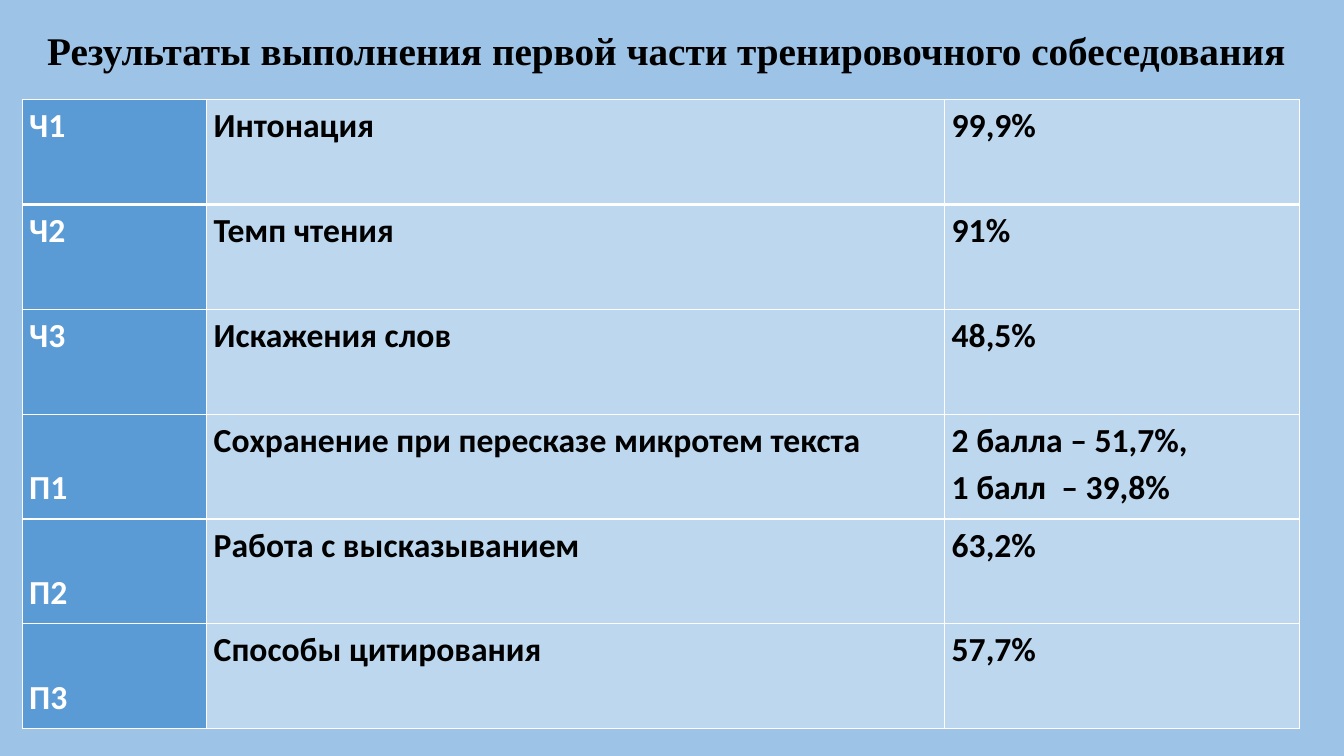
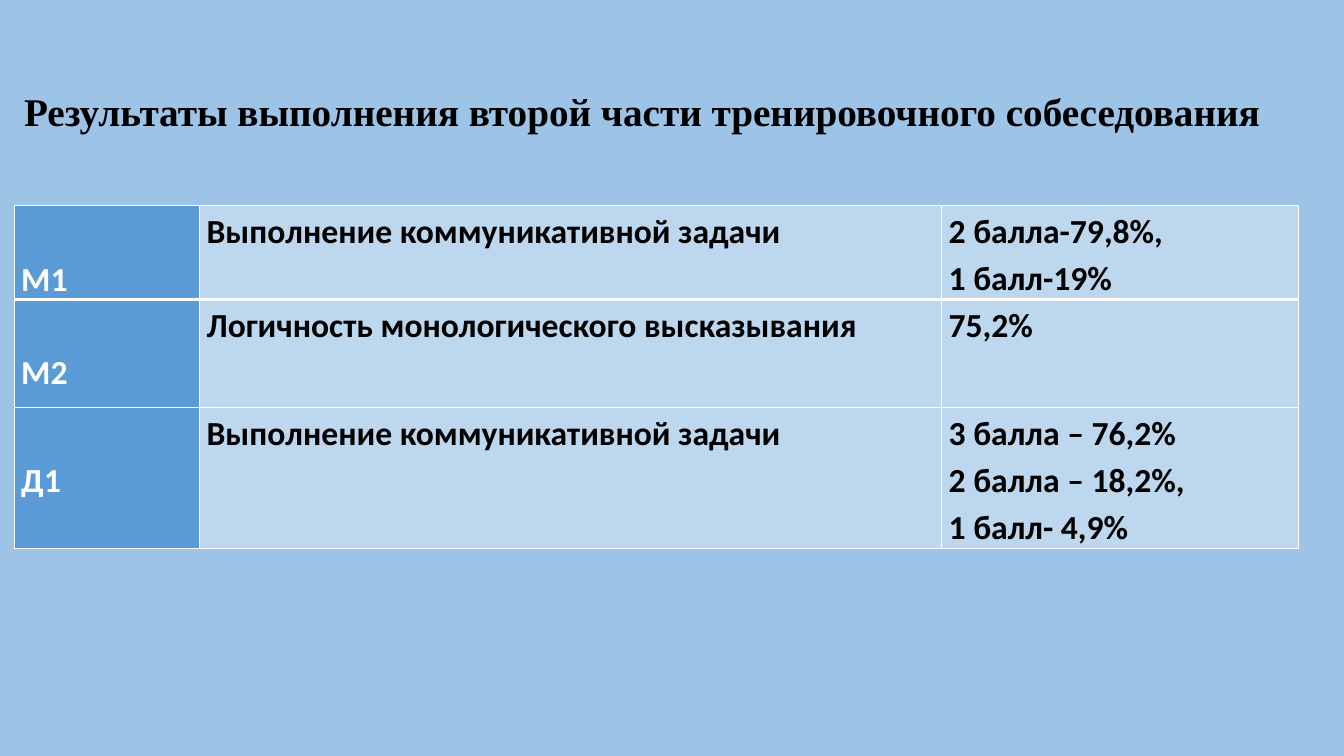
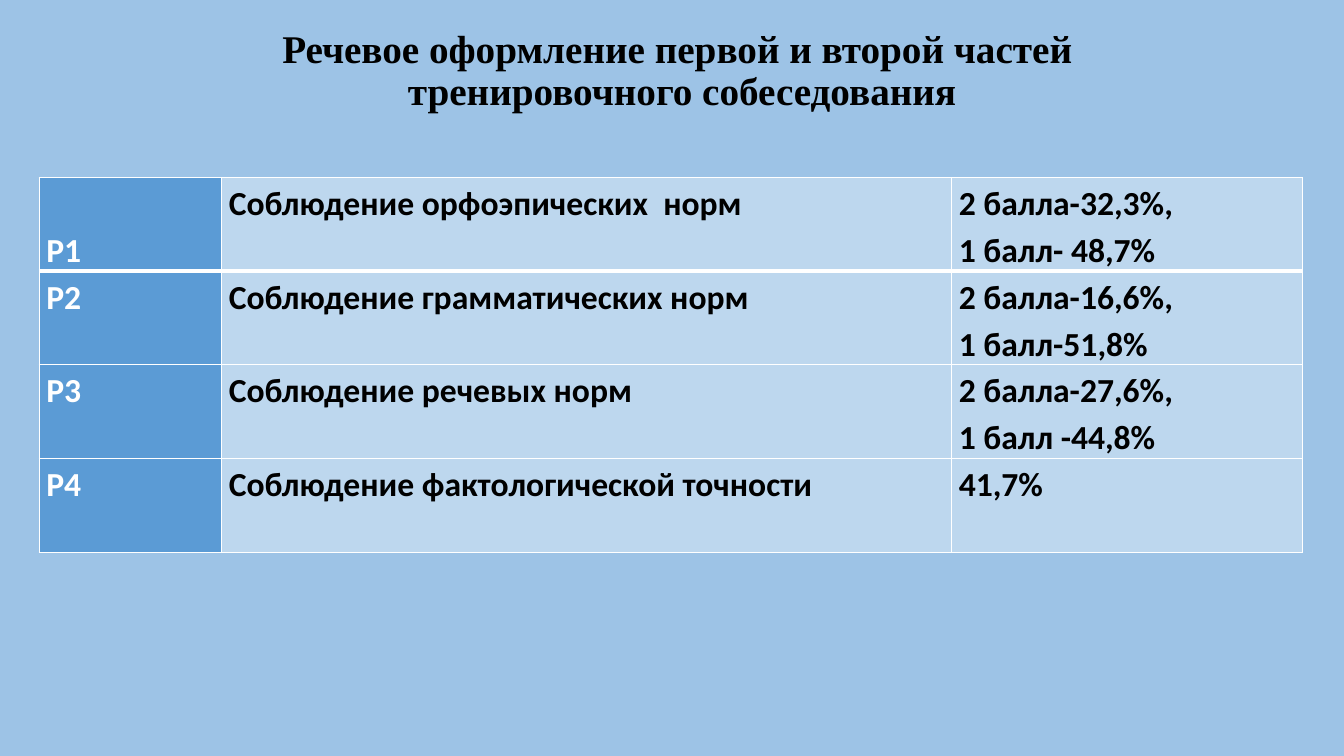
from dataclasses import dataclass

from lxml.etree import SubElement
from pptx import Presentation
from pptx.dml.color import RGBColor as Color
from pptx.enum.text import MSO_ANCHOR as Anchor, PP_ALIGN as Align
from pptx.oxml.ns import qn
from pptx.util import Pt

PX = 9144  # EMU in one px, 100 px to the inch


@dataclass(frozen=True)
class Theme:
    background: str = "9DC3E6"
    label_fill: str = "5B9BD5"
    cell_fill: str = "BDD7EE"
    dark: str = "000000"
    light: str = "FFFFFF"
    title_font: str = "Times New Roman"
    table_font: str = "Calibri"
    title_size: int = 28
    table_size: int = 24
    thin_line: int = 1
    thick_line: int = 3
    cell_inset: int = 7
    cell_line: int = 47  # height of one line of table text


theme = Theme()


def write(frame, text, *, font, size, color, spacing, align=Align.LEFT):
    """Fill a text frame; each line of the text becomes a bold paragraph."""
    frame.text = text
    frame.word_wrap = True
    for paragraph in frame.paragraphs:
        paragraph.alignment = align
        paragraph.line_spacing = spacing
        for run in paragraph.runs:
            run.font.name = font
            run.font.size = Pt(size)
            run.font.bold = True
            run.font.color.rgb = Color.from_string(color)


def add_border(cell, side, width):
    line = SubElement(cell._tc.get_or_add_tcPr(), qn(f"a:ln{side}"), w=str(Pt(width)))
    fill = SubElement(line, qn("a:solidFill"))
    SubElement(fill, qn("a:srgbClr"), val=theme.light)


# Each row: label, line the label stands on, criterion, results, height
slides = [
    {
        "title": "Результаты выполнения первой части тренировочного собеседования",
        "title_box": (37, 26, 1269, 682),
        "anchor": Anchor.TOP,
        "align": Align.LEFT,
        "table_at": (22, 99),
        "columns": (183, 732, 352),
        "rows": [
            ("Ч1", 0, "Интонация", "99,9%", 104),
            ("Ч2", 0, "Темп чтения", "91%", 104),
            ("Ч3", 0, "Искажения слов", "48,5%", 104),
            ("П1", 1, "Сохранение при пересказе микротем текста",
             "2 балла – 51,7%,\n1 балл  – 39,8%", 104),
            ("П2", 1, "Работа с высказыванием", "63,2%", 104),
            ("П3", 1, "Способы цитирования", "57,7%", 104),
        ],
    },
    {
        "title": "Результаты выполнения второй части тренировочного собеседования",
        "title_box": (14, 40, 1291, 145),
        "anchor": Anchor.MIDDLE,
        "align": Align.LEFT,
        "table_at": (14, 204),
        "columns": (184, 736, 354),
        "rows": [
            ("М1", 1, "Выполнение коммуникативной задачи",
             "2 балла-79,8%,\n1 балл-19%", 93),
            ("М2", 1, "Логичность монологического высказывания", "75,2%", 107),
            ("Д1", 1, "Выполнение коммуникативной задачи",
             "3 балла – 76,2%\n2 балла – 18,2%,\n1 балл- 4,9%", 140),
        ],
    },
    {
        "title": "Речевое оформление первой и второй частей \vтренировочного собеседования",
        "title_box": (111, 0, 1131, 143),
        "anchor": Anchor.MIDDLE,
        "align": Align.CENTER,
        "table_at": (39, 176),
        "columns": (181, 724, 348),
        "rows": [
            ("Р1", 1, "Соблюдение орфоэпических  норм",
             "2 балла-32,3%,\n1 балл- 48,7%", 93),
            ("Р2", 0, "Соблюдение грамматических норм",
             "2 балла-16,6%,\n1 балл-51,8%", 93),
            ("Р3", 0, "Соблюдение речевых норм",
             "2 балла-27,6%,\n1 балл -44,8%", 93),
            ("Р4", 0, "Соблюдение фактологической точности", "41,7%", 93),
        ],
    },
]

presentation = Presentation()
presentation.slide_width = 1333 * PX
presentation.slide_height = 750 * PX
blank_layout = presentation.slide_layouts[6]

for content in slides:
    slide = presentation.slides.add_slide(blank_layout)
    slide.background.fill.solid()
    slide.background.fill.fore_color.rgb = Color.from_string(theme.background)

    # Title
    title = slide.shapes.add_textbox(*(length * PX for length in content["title_box"]))
    title.text_frame.vertical_anchor = content["anchor"]
    write(title.text_frame, content["title"], font=theme.title_font,
          size=theme.title_size, color=theme.dark, spacing=0.9, align=content["align"])

    # Table grid
    rows, columns = content["rows"], content["columns"]
    left, top = content["table_at"]
    height = sum(row[-1] for row in rows)
    table = slide.shapes.add_table(len(rows), len(columns), left * PX, top * PX,
                                   sum(columns) * PX, height * PX).table
    table.first_row = table.horz_banding = False
    for column, width in zip(table.columns, columns):
        column.width = width * PX

    # Table cells
    for row_index, (label, label_line, criterion, results, row_height) in enumerate(rows):
        table.rows[row_index].height = row_height * PX
        for column_index, text in enumerate((label, criterion, results)):
            cell = table.cell(row_index, column_index)
            is_label = column_index == 0
            cell.margin_left = cell.margin_right = theme.cell_inset * PX
            cell.margin_top = label_line * theme.cell_line * PX if is_label else 0
            cell.margin_bottom = 0
            # The line under the first row is thick
            widths = {"L": theme.thin_line, "R": theme.thin_line,
                      "T": theme.thick_line if row_index == 1 else theme.thin_line,
                      "B": theme.thick_line if row_index == 0 else theme.thin_line}
            for side, width in widths.items():
                add_border(cell, side, width)
            cell.fill.solid()
            cell.fill.fore_color.rgb = Color.from_string(
                theme.label_fill if is_label else theme.cell_fill)
            write(cell.text_frame, text, font=theme.table_font, size=theme.table_size,
                  color=theme.light if is_label else theme.dark, spacing=1.15)

presentation.save("out.pptx")
